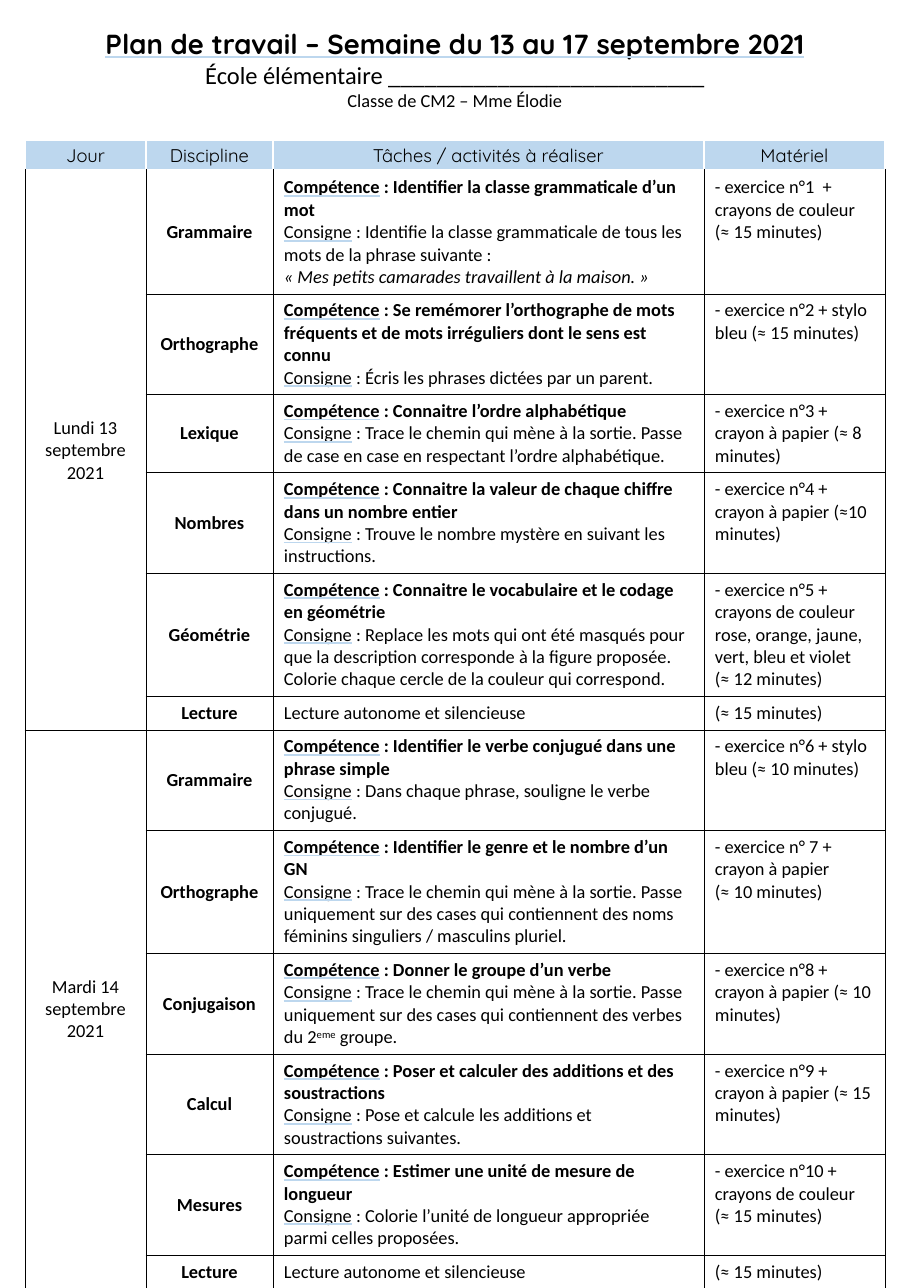
from lxml import etree
from pptx import Presentation
from pptx.dml.color import RGBColor
from pptx.enum.text import MSO_ANCHOR, PP_ALIGN
from pptx.oxml.ns import qn
from pptx.util import Pt

SCALE = 8298
LEFT, CENTER = PP_ALIGN.LEFT, PP_ALIGN.CENTER
TOP, MIDDLE = MSO_ANCHOR.TOP, MSO_ANCHOR.MIDDLE
BLACK, WHITE, LIGHT_BLUE = "000000", "FFFFFF", "BDD7EE"
COLUMN_WIDTHS = [121, 127, 431, 181]
HEADER_HEIGHT, LINE_HEIGHT, ROW_PADDING = 31, 22, 11
HEADINGS = ["Jour", "Discipline", "Tâches / activités à réaliser", "Matériel"]
READING = ("Lecture", None, [("Lecture autonome et silencieuse", "")], ["(≈ 15 minutes)"], 1)

DAYS = [
    ("Lundi 13 septembre", [
        ("Grammaire", "Identifier la classe grammaticale d’un mot",
         [("Identifie la classe grammaticale de tous les mots de la phrase suivante :", ""),
          ("« Mes petits camarades travaillent à la maison. »", "italic")],
         ["- exercice n°1  + crayons de couleur", "(≈ 15 minutes)"], 5),
        ("Orthographe",
         "Se remémorer l’orthographe de mots fréquents et de mots irréguliers dont le sens est connu",
         [("Écris les phrases dictées par un parent.", "")],
         ["- exercice n°2 + stylo bleu (≈ 15 minutes)"], 4),
        ("Lexique", "Connaitre l’ordre alphabétique",
         [("Trace le chemin qui mène à la sortie. Passe de case en case en respectant "
           "l’ordre alphabétique.", "")],
         ["- exercice n°3 + crayon à papier (≈ 8 minutes)"], 3),
        ("Nombres", "Connaitre la valeur de chaque chiffre dans un nombre entier",
         [("Trouve le nombre mystère en suivant les instructions.", "")],
         ["- exercice n°4 + crayon à papier (≈10 minutes)"], 4),
        ("Géométrie", "Connaitre le vocabulaire et le codage en géométrie",
         [("Replace les mots qui ont été masqués pour que la description corresponde à la "
           "figure proposée. Colorie chaque cercle de la couleur qui correspond.", "")],
         ["- exercice n°5 + crayons de couleur rose, orange, jaune, vert, bleu et violet",
          "(≈ 12 minutes)"], 5),
        READING,
    ]),
    ("Mardi 14 septembre", [
        ("Grammaire", "Identifier le verbe conjugué dans une phrase simple",
         [("Dans chaque phrase, souligne le verbe conjugué.", "")],
         ["- exercice n°6 + stylo bleu (≈ 10 minutes)"], 4),
        ("Orthographe", "Identifier le genre et le nombre d’un GN",
         [("Trace le chemin qui mène à la sortie. Passe uniquement sur des cases qui "
           "contiennent des noms féminins singuliers / masculins pluriel.", "")],
         ["- exercice n° 7 + crayon à papier", "(≈ 10 minutes)"], 5),
        ("Conjugaison", "Donner le groupe d’un verbe",
         [("Trace le chemin qui mène à la sortie. Passe uniquement sur des cases qui "
           "contiennent des verbes du 2", ""), ("eme", "superscript"), (" groupe.", "")],
         ["- exercice n°8 + crayon à papier (≈ 10 minutes)"], 4),
        ("Calcul", "Poser et calculer des additions et des soustractions",
         [("Pose et calcule les additions et soustractions suivantes.", "")],
         ["- exercice n°9 + crayon à papier (≈ 15 minutes)"], 4),
        ("Mesures", "Estimer une unité de mesure de longueur",
         [("Colorie l’unité de longueur appropriée parmi celles proposées.", "")],
         ["- exercice n°10 + crayons de couleur", "(≈ 15 minutes)"], 4),
        READING,
    ]),
]


def write(text_frame, paragraphs, align=LEFT):
    for index, (segments, font_name, size, bold) in enumerate(paragraphs):
        paragraph = text_frame.paragraphs[0] if index == 0 else text_frame.add_paragraph()
        paragraph.alignment = align
        paragraph.font.name = font_name
        paragraph.font.size = Pt(size)
        paragraph.font.bold = bold
        paragraph.font.color.rgb = RGBColor.from_string(BLACK)
        for text, style in segments:
            if style == "italic":
                paragraph.add_line_break()
            run = paragraph.add_run()
            run.text = text
            if style == "italic":
                run.font.italic = True
            elif style == "superscript":
                run.font._element.set("baseline", "30000")
            elif style == "underline":
                run.font.underline = True
                underline = etree.SubElement(run.font._element, qn("a:uFill"))
                fill = etree.SubElement(underline, qn("a:solidFill"))
                etree.SubElement(fill, qn("a:srgbClr"), val=LIGHT_BLUE)


def draw_borders(cell, borders):
    properties = cell._tc.get_or_add_tcPr()
    for side, (color, width) in zip("LRTB", borders):
        line = etree.SubElement(properties, qn(f"a:ln{side}"), w=str(Pt(width)))
        fill = etree.SubElement(line, qn("a:solidFill"))
        etree.SubElement(fill, qn("a:srgbClr"), val=color)


presentation = Presentation()
presentation.slide_width = 911 * SCALE
presentation.slide_height = 1288 * SCALE
slide = presentation.slides.add_slide(presentation.slide_layouts[5])

title = slide.shapes.title
title.left, title.top, title.width, title.height = [px * SCALE for px in (66, 21, 778, 97)]
title.text_frame.word_wrap = False
title.text_frame.vertical_anchor = TOP
write(title.text_frame, [
    ([("Plan de travail – Semaine du 13 au 17 septembre 2021", "underline")], "Quicksand", 18, True),
    ([("École élémentaire __________________________", "")], "Calibri", 16, False),
    ([("Classe de CM2 – Mme Élodie", "")], "Calibri", 12, False),
], CENTER)

row_count = 1 + sum(len(tasks) for day, tasks in DAYS)
table_frame = slide.shapes.add_table(row_count, len(HEADINGS), 25 * SCALE, 140 * SCALE,
                                     sum(COLUMN_WIDTHS) * SCALE, 1131 * SCALE)
table = table_frame.table
table.first_row = False
table.horz_banding = False
for column, width in zip(table.columns, COLUMN_WIDTHS):
    column.width = width * SCALE

table.rows[0].height = HEADER_HEIGHT * SCALE
for cell, heading in zip(table.rows[0].cells, HEADINGS):
    draw_borders(cell, [(WHITE, 1)] * 3 + [(WHITE, 3)])
    cell.fill.solid()
    cell.fill.fore_color.rgb = RGBColor.from_string(LIGHT_BLUE)
    cell.vertical_anchor = MIDDLE
    cell.margin_top = cell.margin_bottom = 4 * SCALE
    write(cell.text_frame, [([(heading, "")], "Quicksand", 12, False)], CENTER)

row = 1
for day, tasks in DAYS:
    day_cell = table.cell(row, 0)
    day_cell.merge(table.cell(row + len(tasks) - 1, 0))
    day_cell.vertical_anchor = MIDDLE
    write(day_cell.text_frame,
          [([(text, "")], "Calibri", 12, False) for text in (day, "2021")], CENTER)
    for discipline, skill, instruction, material, line_count in tasks:
        table.rows[row].height = (LINE_HEIGHT * line_count + ROW_PADDING) * SCALE
        top_border = (WHITE, 1) if row == 1 else (BLACK, 0.5)
        for cell in table.rows[row].cells:
            draw_borders(cell, [(BLACK, 0.5)] * 2 + [top_border, (BLACK, 0.5)])
            cell.fill.background()

        discipline_cell = table.cell(row, 1)
        discipline_cell.vertical_anchor = MIDDLE
        write(discipline_cell.text_frame, [([(discipline, "")], "Calibri", 12, True)], CENTER)

        task_paragraphs = [(instruction, "Calibri", 12, False)]
        if skill:
            task_paragraphs = [
                ([("Compétence", "underline"), (f" : {skill}", "")], "Calibri", 12, True),
                ([("Consigne", "underline"), (" : ", "")] + instruction, "Calibri", 12, False),
            ]
        write(table.cell(row, 2).text_frame, task_paragraphs)
        write(table.cell(row, 3).text_frame,
              [([(text, "")], "Calibri", 12, False) for text in material])
        row += 1

presentation.save("out.pptx")
